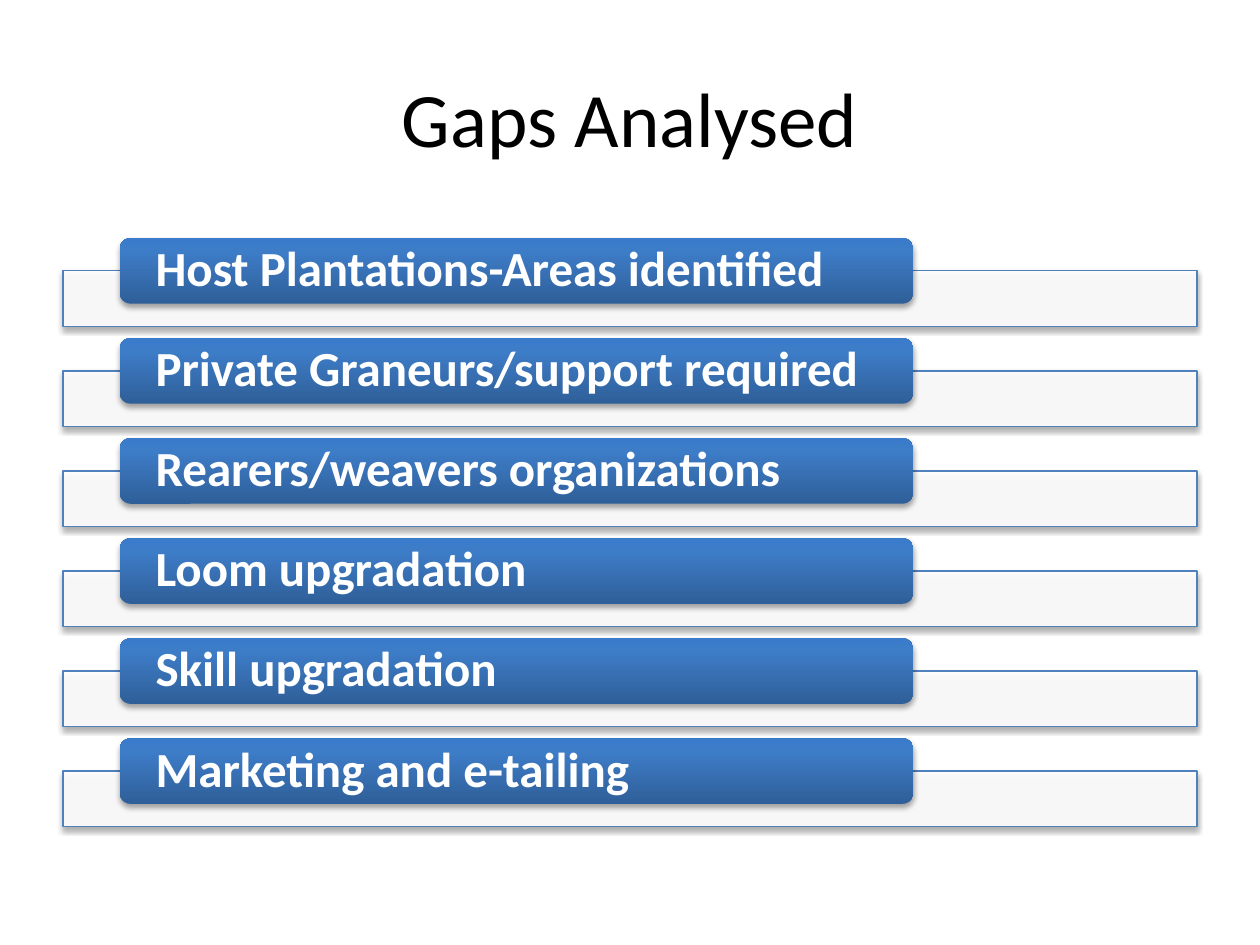
"""Build the slide of analysed gaps as a stack of labelled bars."""
import dataclasses

import lxml.etree
import pptx
import pptx.dml.color
import pptx.enum.shapes
import pptx.enum.text
import pptx.oxml.ns
import pptx.util

Inches = pptx.util.Inches
Pt = pptx.util.Pt
Shape = pptx.enum.shapes.MSO_SHAPE
Align = pptx.enum.text.PP_ALIGN
qn = pptx.oxml.ns.qn


@dataclasses.dataclass(frozen=True)
class Theme:
    font: str = "Calibri"
    ink: str = "000000"
    paper: str = "FFFFFF"
    edge: str = "4F81BD"
    stops: tuple = ((0, "2F5F99"), (80, "3D7CC7"), (100, "3A7CCB"))
    head: int = 44
    body: int = 28


THEME = Theme()
GAPS = (
    "Host Plantations-Areas identified",
    "Private Graneurs/support required",
    "Rearers/weavers organizations",
    "Loom upgradation",
    "Skill upgradation",
    "Marketing and e-tailing",
)
TOP, STEP = 1.89, 0.794


def rgb(code):
    return pptx.dml.color.RGBColor.from_string(code)


def node(parent, tag, **attrs):
    return lxml.etree.SubElement(parent, qn(tag), attrs)


def shade(shape):
    shape.shadow.inherit = False
    effects = shape._element.spPr.find(qn("a:effectLst"))
    outer = node(effects, "a:outerShdw", blurRad=str(Pt(3.1)), dist=str(Pt(1.8)),
                 dir="5400000", rotWithShape="0")
    color = node(outer, "a:srgbClr", val=THEME.ink)
    node(color, "a:alpha", val="35000")


def blend(shape):
    shape.fill.gradient()
    shape.fill.gradient_angle = 90
    stops = shape._element.spPr.find(".//" + qn("a:gsLst"))
    stops.clear()
    for place, code in THEME.stops:
        stop = node(stops, "a:gs", pos=str(place * 1000))
        node(stop, "a:srgbClr", val=code)


def write(shape, text, size, color, align, inset, bold=False):
    frame = shape.text_frame
    frame.word_wrap = True
    frame.vertical_anchor = pptx.enum.text.MSO_ANCHOR.MIDDLE
    frame.margin_left = frame.margin_right = Inches(inset)
    frame.margin_top = frame.margin_bottom = 0
    line = frame.paragraphs[0]
    line.text = text
    line.alignment = align
    font = line.font
    font.name, font.size, font.bold = THEME.font, Pt(size), bold
    font.color.rgb = rgb(color)
    return line


def title(slide, text):
    box = slide.shapes.add_textbox(Inches(0.5), Inches(0.3), Inches(9), Inches(1.25))
    write(box, text, THEME.head, THEME.ink, Align.CENTER, 0.1)


def bar(slide, top):
    shape = slide.shapes.add_shape(
        Shape.RECTANGLE, Inches(0.5), Inches(top), Inches(9), Inches(0.44))
    shape.fill.solid()
    shape.fill.fore_color.rgb = rgb(THEME.paper)
    color = shape._element.spPr.find(qn("a:solidFill")).find(qn("a:srgbClr"))
    node(color, "a:alpha", val="90000")
    shape.line.color.rgb = rgb(THEME.edge)
    shape.line.width = Pt(0.75)
    shade(shape)


def label(slide, text, top):
    shape = slide.shapes.add_shape(
        Shape.ROUNDED_RECTANGLE, Inches(0.95), Inches(top), Inches(6.3), Inches(0.52))
    blend(shape)
    shape.line.fill.background()
    shade(shape)
    line = write(shape, text, THEME.body, THEME.paper, Align.LEFT, 0.26, True)
    line.line_spacing = 0.9


def main():
    deck = pptx.Presentation()
    deck.slide_width, deck.slide_height = Inches(10), Inches(7.5)
    slide = deck.slides.add_slide(deck.slide_layouts[6])
    title(slide, "Gaps Analysed")
    for row, text in enumerate(GAPS):
        top = TOP + row * STEP
        bar(slide, top + 0.26)
        label(slide, text, top)
    deck.save("out.pptx")


if __name__ == "__main__":
    main()
